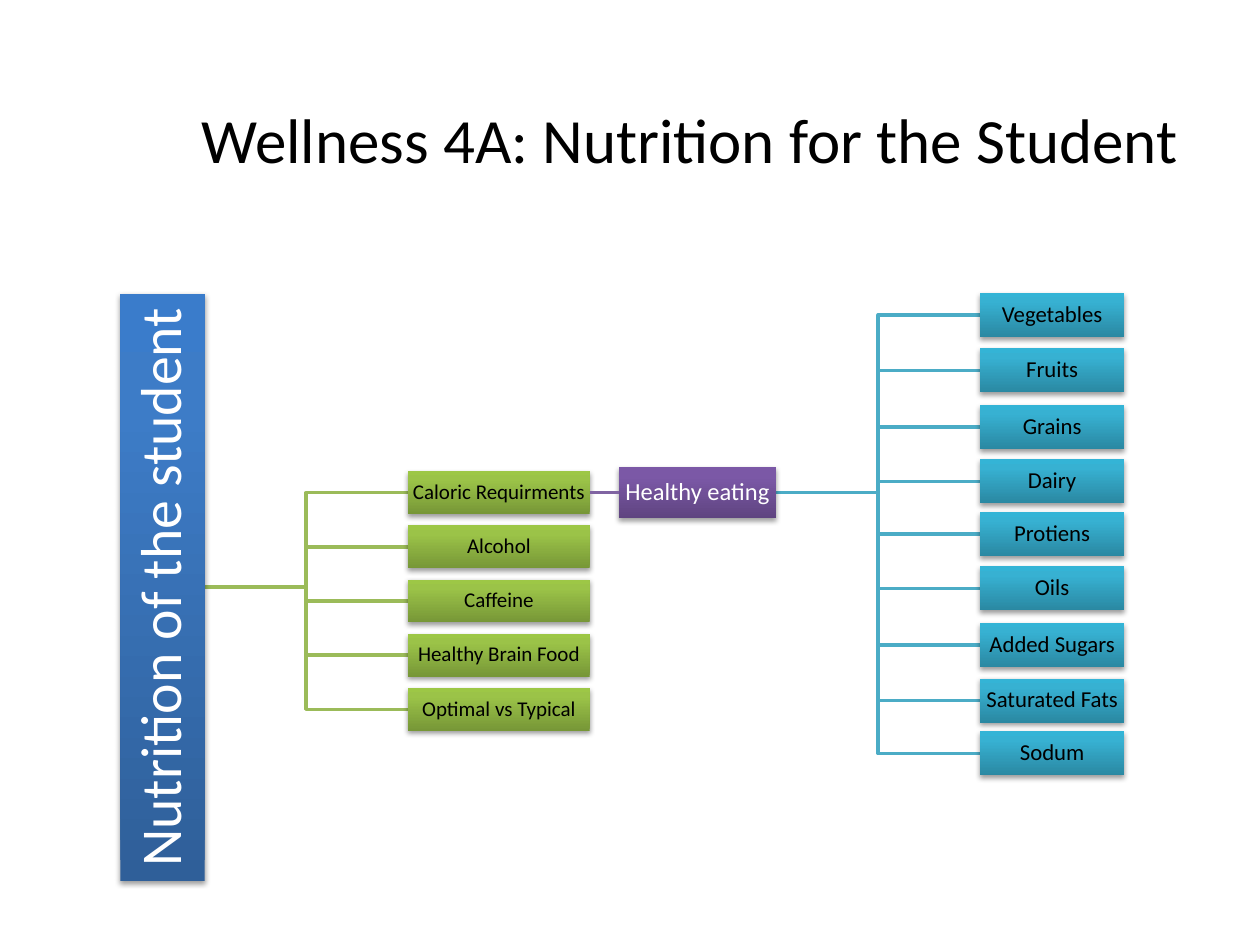
from copy import deepcopy

from lxml.etree import SubElement
from pptx import Presentation
from pptx.dml.color import RGBColor
from pptx.enum.shapes import MSO_CONNECTOR as LINK, MSO_SHAPE as SHAPE
from pptx.enum.text import MSO_ANCHOR as ANCHOR, PP_ALIGN as ALIGN
from pptx.oxml.ns import qn
from pptx.util import Inches, Pt

FONT = "Calibri"
BLACK = RGBColor(0x00, 0x00, 0x00)
WHITE = RGBColor(0xFF, 0xFF, 0xFF)
GREEN = RGBColor(0x9B, 0xBB, 0x59)
TEAL = RGBColor(0x4B, 0xAC, 0xC6)
PURPLE = RGBColor(0x80, 0x64, 0xA2)

# Gradients run from the dark bottom edge to the light top edge
STOPS = (0, 0.8, 1)
BLUE_SHADES = (RGBColor(0x2F, 0x5F, 0x99), RGBColor(0x3D, 0x7C, 0xC7), RGBColor(0x3A, 0x7C, 0xCB))
GREEN_SHADES = (RGBColor(0x77, 0x97, 0x37), RGBColor(0x9B, 0xC3, 0x48), RGBColor(0x9D, 0xC7, 0x46))
PURPLE_SHADES = (RGBColor(0x5F, 0x44, 0x80), RGBColor(0x7B, 0x58, 0xA6), RGBColor(0x7C, 0x57, 0xA8))
TEAL_SHADES = (RGBColor(0x2A, 0x88, 0xA2), RGBColor(0x37, 0xB1, 0xD2), RGBColor(0x34, 0xB4, 0xD6))

# Grid: column edges, and the middle line of each row
ROOT_MID, ROOT_RIGHT = 1.29, 1.62
TOPIC_LEFT, TOPIC_WIDTH = 3.24, 1.44
EATING_LEFT, EATING_WIDTH = 4.91, 1.25
FOOD_LEFT, FOOD_WIDTH = 7.78, 1.14
ROOT_ROW, TOPIC_ROW, TOPIC_STEP = 4.66, 3.91, 0.43

topics = ["Caloric Requirments", "Alcohol", "Caffeine", "Healthy Brain Food", "Optimal vs Typical"]
foods = {
    "Vegetables": 2.5, "Fruits": 2.94, "Grains": 3.39, "Dairy": 3.82, "Protiens": 4.24,
    "Oils": 4.67, "Added Sugars": 5.12, "Saturated Fats": 5.56, "Sodum": 5.98,
}

prs = Presentation()
prs.slide_width, prs.slide_height = Inches(10), Inches(7.5)
slide = prs.slides.add_slide(prs.slide_layouts[6])


def add_box(label, left, row, width, height, shades, size, color, rotation=0, inset=0.01):
    """Shaded box, vertically centred on its row."""
    box = slide.shapes.add_shape(SHAPE.RECTANGLE, Inches(left), Inches(row - height / 2),
                                 Inches(width), Inches(height))
    box.rotation = rotation
    box.line.fill.background()

    # Three-stop gradient that stays upright when the box is turned
    box.fill.gradient()
    box.fill.gradient_angle = 90
    gradient = box._element.spPr.find(qn("a:gradFill"))
    gradient.set("rotWithShape", "0")
    stop_list = gradient.find(qn("a:gsLst"))
    stop_list.append(deepcopy(stop_list[-1]))
    for stop, position, shade in zip(box.fill.gradient_stops, STOPS, shades):
        stop.position = position
        stop.color.rgb = shade

    # Soft shadow below the box
    box.shadow.inherit = False
    effects = box._element.spPr.find(qn("a:effectLst"))
    shadow = SubElement(effects, qn("a:outerShdw"), blurRad=str(Pt(3.1)), dist=str(Pt(1.6)),
                        dir="5400000", rotWithShape="0")
    shadow_color = SubElement(shadow, qn("a:srgbClr"), val="000000")
    SubElement(shadow_color, qn("a:alpha"), val="38000")

    frame = box.text_frame
    frame.word_wrap = True
    frame.vertical_anchor = ANCHOR.MIDDLE
    frame.margin_left = frame.margin_right = Inches(inset)
    frame.margin_top = frame.margin_bottom = Inches(inset)
    paragraph = frame.paragraphs[0]
    paragraph.alignment = ALIGN.CENTER
    paragraph.line_spacing = 0.9
    run = paragraph.add_run()
    run.text = label
    run.font.name, run.font.size = FONT, Pt(size)
    run.font.color.rgb = color
    return box


def add_branch(left, row, right, end_row, color):
    """Elbow line that turns halfway between two columns."""
    middle = (left + right) / 2
    builder = slide.shapes.build_freeform(Inches(left), Inches(row))
    corners = [(middle, row), (middle, end_row), (right, end_row)]
    builder.add_line_segments([(Inches(x), Inches(y)) for x, y in corners], close=False)
    branch = builder.convert_to_shape()
    branch.fill.background()
    branch.line.color.rgb = color
    branch.line.width = Pt(2)
    branch.shadow.inherit = False


# Title
title = slide.shapes.add_textbox(Inches(1.5), Inches(0.75), Inches(7.96), Inches(0.71))
title.text_frame.word_wrap = False
title_run = title.text_frame.paragraphs[0].add_run()
title_run.text = "Wellness 4A: Nutrition for the Student"
title_run.font.name, title_run.font.size = FONT, Pt(36)
title_run.font.color.rgb = BLACK

# Branches, behind the boxes
topic_rows = [TOPIC_ROW + i * TOPIC_STEP for i in range(len(topics))]
for row in topic_rows:
    add_branch(ROOT_RIGHT, ROOT_ROW, TOPIC_LEFT, row, GREEN)
for row in foods.values():
    add_branch(EATING_LEFT + EATING_WIDTH, TOPIC_ROW, FOOD_LEFT, row, TEAL)

# Root, turned to read upwards
root_length = 4.66
add_box("Nutrition of the student", ROOT_MID - root_length / 2, ROOT_ROW, root_length, 0.67,
        BLUE_SHADES, 33, WHITE, rotation=270, inset=0.02)

# Topics, healthy eating and its foods
topic_boxes = [add_box(topic, TOPIC_LEFT, row, TOPIC_WIDTH, 0.34, GREEN_SHADES, 12, BLACK)
               for topic, row in zip(topics, topic_rows)]
eating = add_box("Healthy eating", EATING_LEFT, TOPIC_ROW, EATING_WIDTH, 0.41,
                 PURPLE_SHADES, 14, WHITE)
for food, row in foods.items():
    add_box(food, FOOD_LEFT, row, FOOD_WIDTH, 0.35, TEAL_SHADES, 13, BLACK)

# Link from caloric requirements to healthy eating
link = slide.shapes.add_connector(LINK.STRAIGHT, 0, 0, 0, 0)
link.begin_connect(topic_boxes[0], 3)
link.end_connect(eating, 1)
link.line.color.rgb = PURPLE
link.line.width = Pt(2)
SubElement(link._element.spPr, qn("a:effectLst"))

prs.save("out.pptx")
